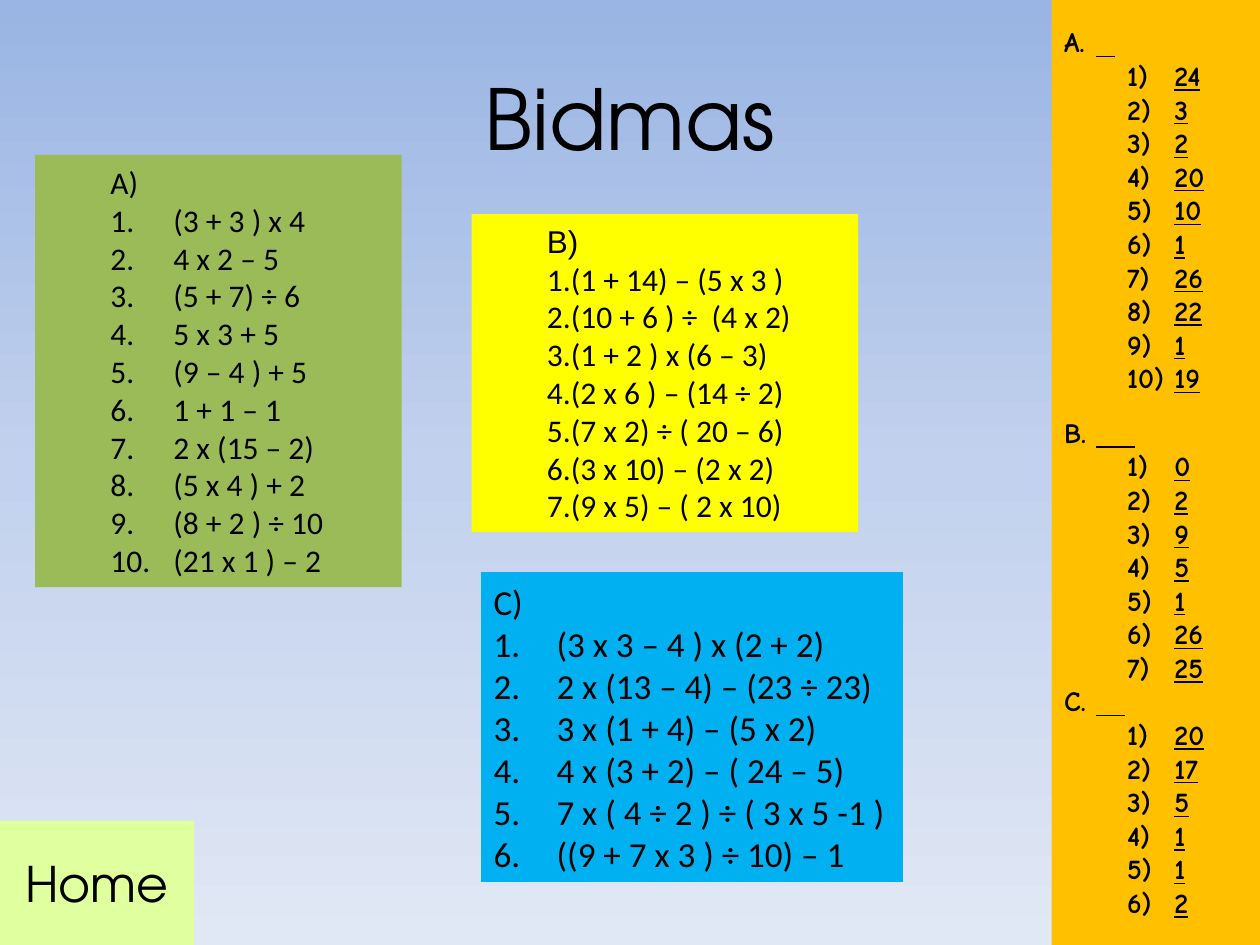
from copy import deepcopy

from lxml import etree
from pptx import Presentation
from pptx.dml.color import RGBColor
from pptx.enum.shapes import MSO_SHAPE
from pptx.enum.text import MSO_ANCHOR, PP_ALIGN
from pptx.oxml.ns import qn
from pptx.util import Pt

RECTANGLE = MSO_SHAPE.RECTANGLE
MIDDLE = MSO_ANCHOR.MIDDLE
LEFT, CENTER, JUSTIFY = PP_ALIGN.LEFT, PP_ALIGN.CENTER, PP_ALIGN.JUSTIFY

COLORS = {
    "text": "000000", "green": "9BBB59", "yellow": "FFFF00", "blue": "00B0F0",
    "orange": "FFC000", "home": "E0FF9F",
}
BACKGROUND = [(0, "9AB5E4"), (0.5, "C2D1ED"), (1, "E1E8F5")]
TITLE_FONT, BODY_FONT, ANSWER_FONT = "TeX Gyre Adventor", "Calibri", "Comic Neue"

QUESTIONS_A = [
    "(3 + 3 ) x 4", "4 x 2 – 5", "(5 + 7) ÷ 6", "5 x 3 + 5", "(9 – 4 ) + 5",
    "1 + 1 – 1", "2 x (15 – 2)", "(5 x 4 ) + 2", "(8 + 2 ) ÷ 10", "(21 x 1 ) – 2",
]
QUESTIONS_B = [
    "(1 + 14) – (5 x 3 )", "(10 + 6 ) ÷  (4 x 2)", "(1 + 2 ) x (6 – 3)",
    "(2 x 6 ) – (14 ÷ 2)", "(7 x 2) ÷ ( 20 – 6)", "(3 x 10) – (2 x 2)",
    "(9 x 5) – ( 2 x 10)",
]
QUESTIONS_C = [
    "(3 x 3 – 4 ) x (2 + 2)", "2 x (13 – 4) – (23 ÷ 23)", "3 x (1 + 4) – (5 x 2)",
    "4 x (3 + 2) – ( 24 – 5)", "7 x ( 4 ÷ 2 ) ÷ ( 3 x 5 -1 )",
    "((9 + 7 x 3 ) ÷ 10) – 1",
]
ANSWERS = [
    ("  ", 0, [24, 3, 2, 20, 10, 1, 26, 22, 1, 19]),
    ("    ", 12, [0, 2, 9, 5, 1, 26, 25]),
    ("   ", 0, [20, 17, 5, 1, 1, 2]),
]


def paint_background(slide):
    """Fill the slide with a vertical three-stop gradient."""
    fill = slide.background.fill
    fill.gradient()
    fill.gradient_angle = 270
    first_stop = slide.element.find(".//" + qn("a:gs"))
    first_stop.addnext(deepcopy(first_stop))
    for stop, (position, color) in zip(fill.gradient_stops, BACKGROUND):
        stop.position = position
        stop.color.rgb = RGBColor.from_string(color)


def add_panel(slide, box, color):
    """Add a plain filled rectangle and return its text frame."""
    shape = slide.shapes.add_shape(RECTANGLE, *map(Pt, box))
    shape.shadow.inherit = False
    shape.fill.solid()
    shape.fill.fore_color.rgb = RGBColor.from_string(COLORS[color])
    shape.line.fill.background()
    return prepare_text(shape)


def prepare_text(shape):
    """Wrap and vertically centre the text of a shape."""
    frame = shape.text_frame
    frame.word_wrap = True
    frame.vertical_anchor = MIDDLE
    return frame


def add_run(paragraph, text, font, size, strong=False):
    """Add one run, bold and underlined when strong."""
    run = paragraph.add_run()
    run.text = text
    run.font.name = font
    run.font.size = Pt(size)
    run.font.bold = run.font.underline = strong
    run.font.color.rgb = RGBColor.from_string(COLORS["text"])


def next_paragraph(frame):
    """Return the unused first paragraph or a new one."""
    first = frame.paragraphs[0]
    return frame.add_paragraph() if first.runs else first


def format_item(paragraph, margin, indent, level, align=LEFT, numbering=None):
    """Set alignment, level, hanging indent and automatic numbering."""
    paragraph.alignment = align
    paragraph.level = level
    properties = paragraph._p.get_or_add_pPr()
    properties.set("marL", str(Pt(margin)))
    properties.set("indent", str(Pt(indent)))
    if numbering:
        etree.SubElement(properties, qn("a:buAutoNum"), type=numbering)


def add_heading(slide, box, text):
    """Add the centred slide title."""
    frame = prepare_text(slide.shapes.add_textbox(*map(Pt, box)))
    paragraph = frame.paragraphs[0]
    paragraph.alignment = CENTER
    add_run(paragraph, text, TITLE_FONT, 48)


def add_home_button(slide, box):
    """Add the home button."""
    paragraph = add_panel(slide, box, "home").paragraphs[0]
    paragraph.alignment = CENTER
    add_run(paragraph, "Home", TITLE_FONT, 28)


def add_questions(slide, box, color, label, questions, margin, indent,
                  size=18, level=1, align=LEFT, label_font=BODY_FONT):
    """Add a labelled panel of numbered questions."""
    frame = add_panel(slide, box, color)
    paragraph = next_paragraph(frame)
    format_item(paragraph, margin, indent, level, align)
    add_run(paragraph, label, label_font, size)
    for question in questions:
        paragraph = next_paragraph(frame)
        format_item(paragraph, margin, indent, level, align, "arabicPeriod")
        add_run(paragraph, question, BODY_FONT, size)


def add_answers(slide, box):
    """Add the side panel with lettered groups of numbered answers."""
    frame = add_panel(slide, box, "orange")
    for blank, gap, answers in ANSWERS:
        paragraph = next_paragraph(frame)
        paragraph.space_before = Pt(gap)
        format_item(paragraph, 18, -18, 0, numbering="alphaUcPeriod")
        add_run(paragraph, blank, ANSWER_FONT, 16, True)
        for answer in answers:
            paragraph = next_paragraph(frame)
            format_item(paragraph, 63, -27, 1, numbering="arabicParenR")
            add_run(paragraph, str(answer), ANSWER_FONT, 16, True)


def main():
    """Build and save the slide."""
    presentation = Presentation()
    presentation.slide_width, presentation.slide_height = Pt(720), Pt(540)
    slide = presentation.slides.add_slide(presentation.slide_layouts[6])
    paint_background(slide)
    add_heading(slide, (36, 21.6, 648, 90), "Bidmas")
    add_home_button(slide, (0, 469, 111, 71))
    add_questions(slide, (20, 88.5, 209.5, 247), "green", "A)", QUESTIONS_A, 72, -36)
    add_questions(slide, (269.5, 122.4, 221, 181.5), "yellow", "B)", QUESTIONS_B,
                  36, 0, label_font="Arial")
    add_questions(slide, (275, 327, 241, 177), "blue", "C)", QUESTIONS_C,
                  36, -36, size=20, level=0, align=JUSTIFY)
    add_answers(slide, (601, -0.5, 119, 540.5))
    presentation.save("out.pptx")


if __name__ == "__main__":
    main()
